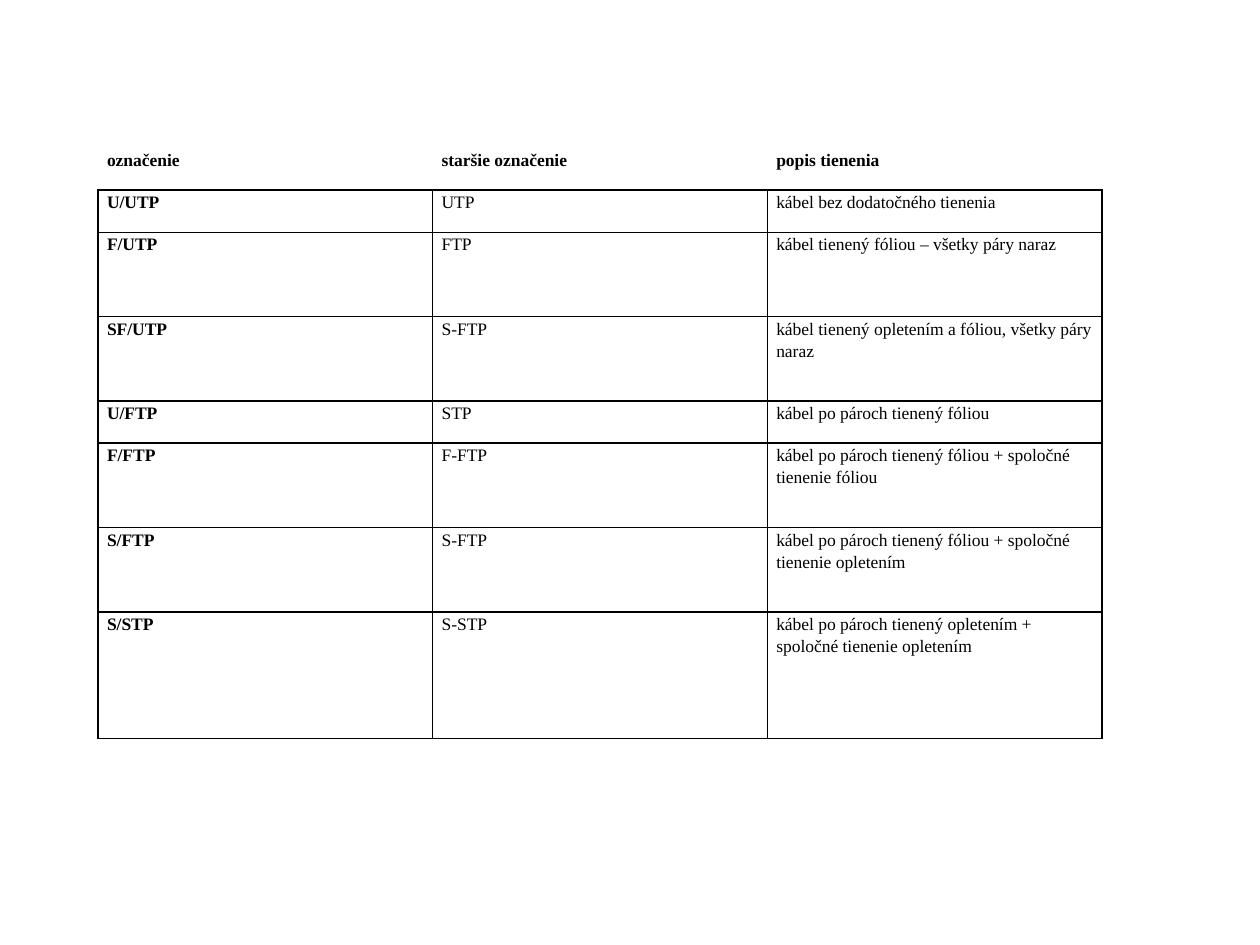
from typing import NamedTuple

from lxml import etree
from pptx import Presentation
from pptx.dml.color import RGBColor
from pptx.oxml.ns import qn
from pptx.util import Emu, Pt

PX = 914400 / 126
BLACK = RGBColor(0x00, 0x00, 0x00)
FONT = "Times New Roman"
FONT_SIZE = Pt(10)
LINE_SPACING = 1.15
BORDER_WIDTH = Pt(1)
BORDER_SIDES = ("lnL", "lnR", "lnT", "lnB")

TABLE_LEFT, TABLE_TOP = 98, 148
TABLE_WIDTH, TABLE_HEIGHT = 1004, 591
CELL_INSET = 9


class CableRow(NamedTuple):
    marking: str
    older_marking: str
    shielding: str
    height_units: int


HEADER = CableRow("označenie", "staršie označenie", "popis tienenia", 1)
CABLES = [
    CableRow("U/UTP", "UTP", "kábel bez dodatočného tienenia", 1),
    CableRow("F/UTP", "FTP", "kábel tienený fóliou – všetky páry naraz", 2),
    CableRow("SF/UTP", "S-FTP",
             "kábel tienený opletením a fóliou, všetky páry naraz", 2),
    CableRow("U/FTP", "STP", "kábel po pároch tienený fóliou", 1),
    CableRow("F/FTP", "F-FTP",
             "kábel po pároch tienený fóliou + spoločné tienenie fóliou", 2),
    CableRow("S/FTP", "S-FTP",
             "kábel po pároch tienený fóliou + spoločné tienenie opletením", 2),
    CableRow("S/STP", "S-STP",
             "kábel po pároch tienený opletením + spoločné tienenie opletením", 3),
]


def px(length: float) -> Emu:
    return Emu(round(length * PX))


def set_borders(cell, visible_sides: tuple[str, ...]) -> None:
    properties = cell._tc.get_or_add_tcPr()
    for side in BORDER_SIDES:
        line = etree.SubElement(properties, qn(f"a:{side}"), w=str(BORDER_WIDTH))
        if side in visible_sides:
            fill = etree.SubElement(line, qn("a:solidFill"))
            etree.SubElement(fill, qn("a:srgbClr"), val=str(BLACK))
        else:
            etree.SubElement(line, qn("a:noFill"))


def fill_cell(cell, text: str, bold: bool, visible_sides: tuple[str, ...]) -> None:
    set_borders(cell, visible_sides)
    cell.fill.background()
    cell.margin_left = cell.margin_right = px(CELL_INSET)
    cell.margin_top = cell.margin_bottom = 0
    paragraph = cell.text_frame.paragraphs[0]
    paragraph.text = text
    paragraph.line_spacing = LINE_SPACING
    font = paragraph.runs[0].font
    font.name, font.size, font.bold = FONT, FONT_SIZE, bold
    font.color.rgb = BLACK


def add_cable_table(slide, rows: list[CableRow]) -> None:
    column_count = 3
    table = slide.shapes.add_table(
        len(rows), column_count, px(TABLE_LEFT), px(TABLE_TOP),
        px(TABLE_WIDTH), px(TABLE_HEIGHT)).table
    table.first_row = table.horz_banding = False

    for column in table.columns:
        column.width = px(TABLE_WIDTH / column_count)

    unit_height = TABLE_HEIGHT / sum(row.height_units for row in rows)
    for row_index, row in enumerate(rows):
        table.rows[row_index].height = px(row.height_units * unit_height)
        is_header = row_index == 0
        sides = ("lnB",) if is_header else BORDER_SIDES
        texts = (row.marking, row.older_marking, row.shielding)
        for column_index, text in enumerate(texts):
            fill_cell(table.cell(row_index, column_index), text,
                      is_header or column_index == 0, sides)


def main() -> None:
    presentation = Presentation()
    presentation.slide_width = px(1260)
    presentation.slide_height = px(945)
    # Blank layout: the slide holds only the cable table
    slide = presentation.slides.add_slide(presentation.slide_layouts[6])
    add_cable_table(slide, [HEADER, *CABLES])
    presentation.save("out.pptx")


if __name__ == "__main__":
    main()
